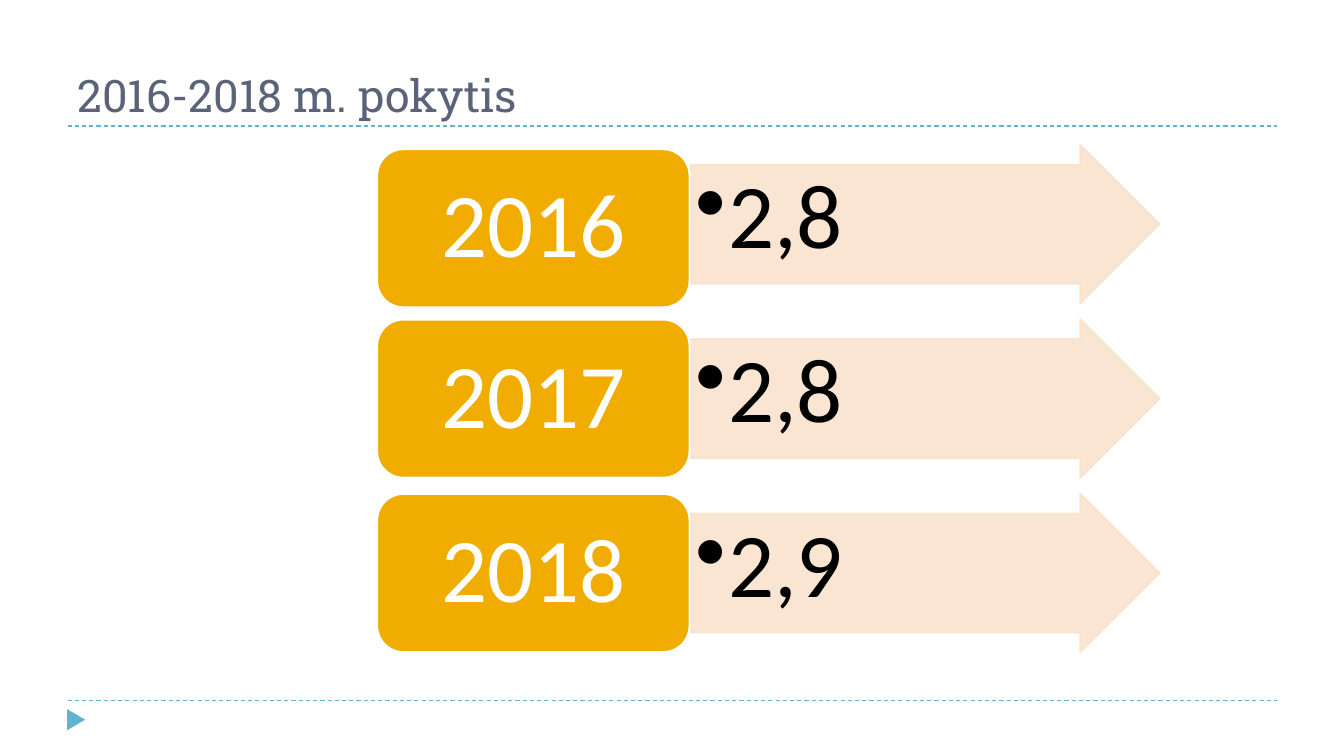
from lxml import etree
from pptx import Presentation
from pptx.dml.color import RGBColor
from pptx.enum.dml import MSO_LINE
from pptx.enum.shapes import MSO_CONNECTOR, MSO_SHAPE
from pptx.enum.text import MSO_ANCHOR, PP_ALIGN
from pptx.oxml.ns import qn
from pptx.util import Inches, Pt

STRAIGHT = MSO_CONNECTOR.STRAIGHT
TRIANGLE = MSO_SHAPE.ISOSCELES_TRIANGLE
ARROW = MSO_SHAPE.RIGHT_ARROW
ROUNDED = MSO_SHAPE.ROUNDED_RECTANGLE
DASH = MSO_LINE.DASH
TOP, MIDDLE, BOTTOM = MSO_ANCHOR.TOP, MSO_ANCHOR.MIDDLE, MSO_ANCHOR.BOTTOM
LEFT, CENTER = PP_ALIGN.LEFT, PP_ALIGN.CENTER

TEAL = RGBColor(0x60, 0xB5, 0xCC)
SLATE = RGBColor(0x5A, 0x63, 0x78)
PEACH = RGBColor(0xF9, 0xE3, 0xCC)
AMBER = RGBColor(0xF0, 0xAD, 0x00)
WHITE = RGBColor(0xFF, 0xFF, 0xFF)
BLACK = RGBColor(0x00, 0x00, 0x00)

YEARS = [("2016", "2,8", 1.44, 1.48), ("2017", "2,8", 3.17, 3.17), ("2018", "2,9", 4.9, 4.9)]


class SlideBuilder:
    """Draws the elements of one slide in a shared style."""

    title_font = "Roboto Slab"
    body_font = "Calibri"
    body_size = 65

    def __init__(self, slide):
        self.slide = slide

    def rule(self, top):
        """Draw a dashed line across the slide."""
        line = self.slide.shapes.add_connector(
            STRAIGHT, Inches(0.67), Inches(top), Inches(12.67), Inches(top))
        line.line.color.rgb = TEAL
        line.line.width = Pt(0.75)
        line.line.dash_style = DASH
        etree.SubElement(line._element.spPr, qn("a:effectLst"))

    def shape(self, kind, left, top, width, height, fill, outline=None):
        """Draw a filled preset shape, outlined if a colour is given."""
        shape = self.slide.shapes.add_shape(
            kind, Inches(left), Inches(top), Inches(width), Inches(height))
        shape.shadow.inherit = False
        shape.fill.solid()
        shape.fill.fore_color.rgb = fill
        if outline is None:
            shape.line.fill.background()
        else:
            shape.line.color.rgb = outline
            shape.line.width = Pt(1.5)
        return shape

    def add_text(self, shape, text, font, size, color, anchor, align, margins):
        """Put one styled run into a shape and return its paragraph."""
        frame = shape.text_frame
        frame.word_wrap = True
        frame.vertical_anchor = anchor
        frame.margin_left = frame.margin_right = Inches(margins[0])
        frame.margin_top = frame.margin_bottom = Inches(margins[1])
        paragraph = frame.paragraphs[0]
        paragraph.alignment = align
        run = paragraph.add_run()
        run.text = text
        run.font.name = font
        run.font.size = Pt(size)
        run.font.color.rgb = color
        return paragraph

    def title(self, text):
        """Draw the slide title."""
        box = self.slide.shapes.add_textbox(
            Inches(0.67), Inches(0.17), Inches(12), Inches(1.08))
        self.add_text(box, text, self.title_font, 32, SLATE, BOTTOM, LEFT, (0.1, 0.05))

    def marker(self):
        """Draw the small footer triangle pointing right."""
        self.shape(TRIANGLE, 0.65, 7.05, 0.21, 0.18, TEAL).rotation = 90

    def value_arrow(self, text, top):
        """Draw a translucent arrow with a bulleted value."""
        arrow = self.shape(ARROW, 6.85, top, 4.65, 1.57, PEACH, PEACH)
        arrow.adjustments[0] = 0.75
        arrow.adjustments[1] = 0.5
        for color in arrow._element.spPr.iter(qn("a:srgbClr")):
            etree.SubElement(color, qn("a:alpha"), val="90000")
        paragraph = self.add_text(arrow, text, self.body_font, self.body_size,
                                  BLACK, TOP, LEFT, (0.05, 0.05))
        paragraph.level = 1
        paragraph.line_spacing = 0.9
        properties = paragraph._p.get_or_add_pPr()
        properties.set("marL", str(Inches(0.31)))
        properties.set("indent", str(Inches(-0.31)))
        etree.SubElement(properties, qn("a:buChar"), char="•")

    def year_box(self, text, top):
        """Draw a rounded box with a centred year."""
        box = self.shape(ROUNDED, 3.74, top, 3.1, 1.57, AMBER, WHITE)
        paragraph = self.add_text(box, text, self.body_font, self.body_size,
                                  WHITE, MIDDLE, CENTER, (0.27, 0.14))
        paragraph.line_spacing = 0.9


def main():
    """Build and save the presentation."""
    presentation = Presentation()
    presentation.slide_width = Inches(13.33)
    presentation.slide_height = Inches(7.5)
    builder = SlideBuilder(presentation.slides.add_slide(presentation.slide_layouts[6]))
    for top in (6.95, 1.25):
        builder.rule(top)
    builder.marker()
    builder.title("2016-2018 m. pokytis")
    for year, value, arrow_top, box_top in YEARS:
        builder.value_arrow(value, arrow_top)
        builder.year_box(year, box_top)
    presentation.save("out.pptx")


if __name__ == "__main__":
    main()
